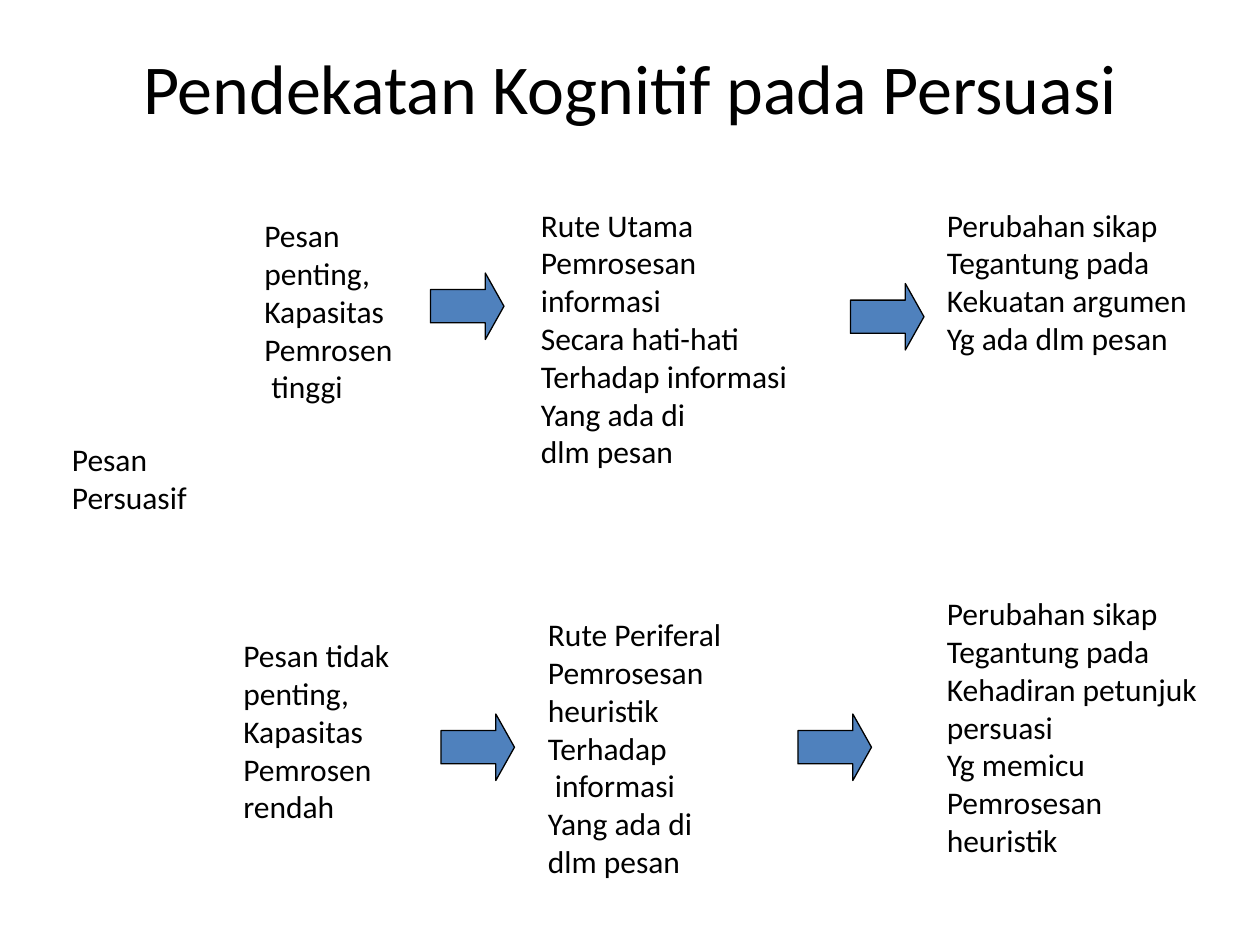
"""Build a slide on the cognitive approach to persuasion."""
from pptx import Presentation
from pptx.dml.color import RGBColor
from pptx.enum.shapes import MSO_SHAPE
from pptx.enum.text import MSO_ANCHOR, MSO_AUTO_SIZE, PP_ALIGN
from pptx.util import Pt

COLORS = {"text": "000000", "arrow": "4F81BD", "outline": "000000"}

TEXTS = [
    (34, 248, 96, 50, ["Pesan", "Persuasif"]),
    (144, 120, 108, 115, ["Pesan", "penting,", "Kapasitas", "Pemrosen", " tinggi"]),
    (132, 360, 108, 137, ["Pesan tidak", "penting,", "Kapasitas", "Pemrosen", "rendah"]),
    (302, 114, 186, 158, ["Rute Utama", "Pemrosesan", "informasi", "Secara hati-hati",
                          "Terhadap informasi", "Yang ada di", "dlm pesan"]),
    (306, 348, 162, 158, ["Rute Periferal", "Pemrosesan", "heuristik", "Terhadap",
                          " informasi", "Yang ada di", "dlm pesan"]),
    (534, 114, 186, 94, ["Perubahan sikap", "Tegantung pada", "Kekuatan argumen",
                         "Yg ada dlm pesan"]),
    (534, 336, 186, 158, ["Perubahan sikap", "Tegantung pada", "Kehadiran petunjuk persuasi",
                          "Yg memicu", "Pemrosesan", "heuristik"]),
]
ARROWS = [(246, 156), (456, 408), (252, 408), (486, 162)]


def write_lines(frame, lines, size, align):
    frame.word_wrap = True
    frame.auto_size = MSO_AUTO_SIZE.NONE
    frame.vertical_anchor = MSO_ANCHOR.TOP
    frame.text = "\n".join(lines)
    for para in frame.paragraphs:
        para.alignment = align
        para.font.name = "Calibri"
        para.font.size = Pt(size)
        para.font.color.rgb = RGBColor.from_string(COLORS["text"])


deck = Presentation()
deck.slide_width, deck.slide_height = Pt(720), Pt(540)
page = deck.slides.add_slide(deck.slide_layouts[5])

title = page.shapes.title
title.left, title.top, title.width, title.height = Pt(36), Pt(21.6), Pt(648), Pt(90)
write_lines(title.text_frame, ["Pendekatan Kognitif pada Persuasi"], 40, PP_ALIGN.CENTER)

for left, top, width, height, lines in TEXTS:
    box = page.shapes.add_textbox(Pt(left), Pt(top), Pt(width), Pt(height))
    write_lines(box.text_frame, lines, 18, PP_ALIGN.LEFT)

for left, top in ARROWS:
    arrow = page.shapes.add_shape(MSO_SHAPE.RIGHT_ARROW, Pt(left), Pt(top), Pt(42), Pt(38))
    arrow.adjustments[0] = 0.5
    arrow.adjustments[1] = 0.28
    arrow.shadow.inherit = False
    arrow.fill.solid()
    arrow.fill.fore_color.rgb = RGBColor.from_string(COLORS["arrow"])
    arrow.line.color.rgb = RGBColor.from_string(COLORS["outline"])
    arrow.line.width = Pt(0.75)

deck.save("out.pptx")
